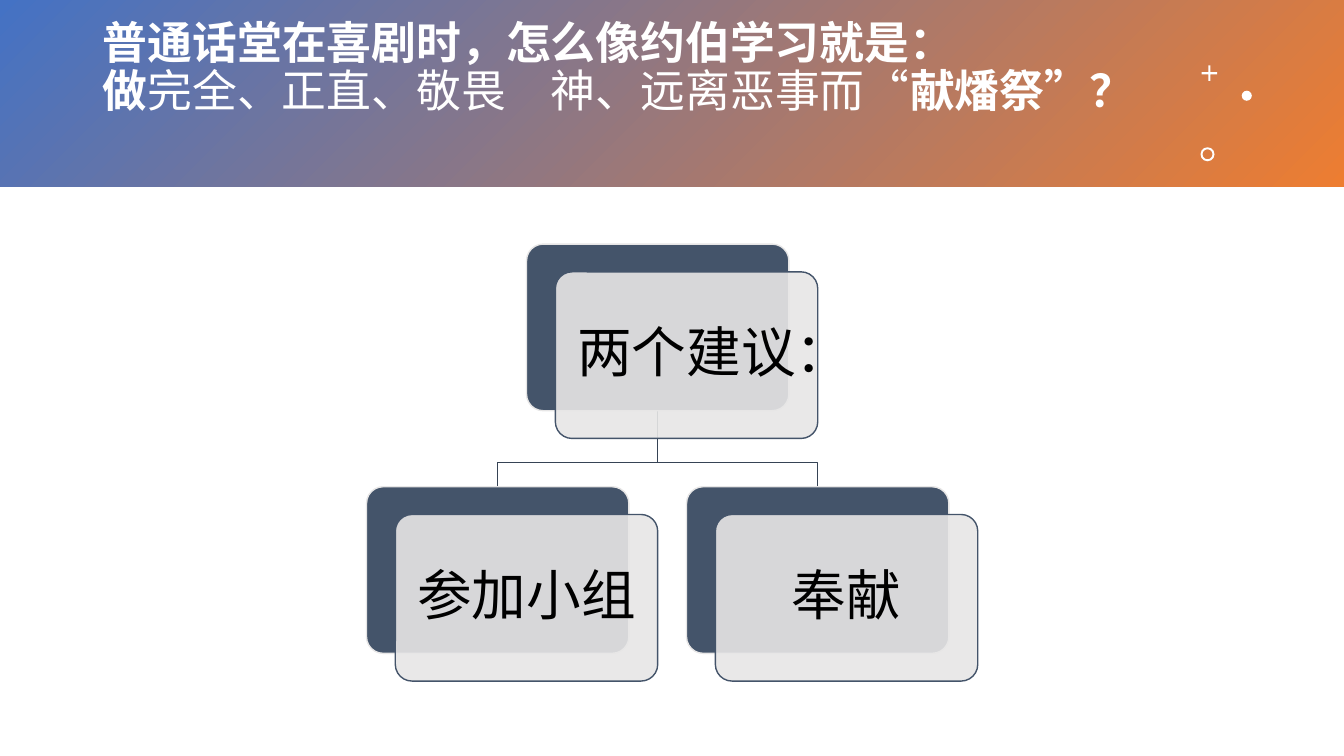
import pptx
import pptx.dml.color
import pptx.enum.lang
import pptx.enum.shapes
import pptx.enum.text
import pptx.oxml
import pptx.oxml.ns
import pptx.util

Pt = pptx.util.Pt
RGBColor = pptx.dml.color.RGBColor
PRESET = pptx.enum.shapes.MSO_SHAPE
ALIGN = pptx.enum.text.PP_ALIGN
MIDDLE = pptx.enum.text.MSO_ANCHOR.MIDDLE

WHITE = RGBColor(0xFF, 0xFF, 0xFF)
BLACK = RGBColor(0x00, 0x00, 0x00)
BLUE = RGBColor(0x44, 0x72, 0xC4)
ORANGE = RGBColor(0xED, 0x7D, 0x31)
SLATE = RGBColor(0x44, 0x54, 0x6A)
DARK_SLATE = RGBColor(0x36, 0x43, 0x55)
PALE = RGBColor(0xE7, 0xE6, 0xE6)

CARD_WIDTH, CARD_HEIGHT = 187.4, 119
VEIL_DX, VEIL_DY = 20.6, 19.8
COLUMN_STEP, ROW_STEP = 228.6, 173.3
BRANCH_DROP = 37


def write_text(paragraph, text, size=32, color=WHITE, bold=False, align=ALIGN.LEFT):
    paragraph.alignment = align
    paragraph.line_spacing = 0.9
    run = paragraph.add_run()
    run.text = text
    run.font.name = "Calibri"
    run.font.size = Pt(size)
    run.font.bold = bold
    run.font.color.rgb = color
    run.font.language_id = pptx.enum.lang.MSO_LANGUAGE_ID.SIMPLIFIED_CHINESE


def set_margins(frame, left, top, right, bottom):
    frame.margin_left, frame.margin_top = Pt(left), Pt(top)
    frame.margin_right, frame.margin_bottom = Pt(right), Pt(bottom)


def add_filled(slide, preset, left, top, width, height, fill, outline=None, adjust=None):
    part = slide.shapes.add_shape(preset, Pt(left), Pt(top), Pt(width), Pt(height))
    part.shadow.inherit = False
    part.fill.solid()
    part.fill.fore_color.rgb = fill
    if outline is None:
        part.line.fill.background()
    else:
        part.line.color.rgb = outline
        part.line.width = Pt(1)
    if adjust is not None:
        part.adjustments[0] = adjust
    return part


def add_header(slide, left, top, width, height):
    band = add_filled(slide, PRESET.RECTANGLE, left, top, width, height, BLUE)
    band.fill.gradient()
    band.fill.gradient_angle = 315
    for stop, color, position in zip(band.fill.gradient_stops, (BLUE, ORANGE), (0, 1)):
        stop.color.rgb = color
        stop.position = position
    slide.shapes._spTree.insert(2, band._element)

    title = slide.shapes.title
    title.left, title.top = Pt(left + 66.2), Pt(top + 23.8)
    title.width, title.height = Pt(774), Pt(85.7)
    frame = title.text_frame
    frame.word_wrap = True
    frame.auto_size = pptx.enum.text.MSO_AUTO_SIZE.NONE
    frame.vertical_anchor = MIDDLE
    set_margins(frame, 7.2, 3.6, 7.2, 38)
    heading = frame.paragraphs[0]
    write_text(heading, "普通话堂在喜剧时，怎么像约伯学习就是：", bold=True)
    heading.add_line_break()
    write_text(heading, "做", bold=True)
    write_text(heading, "完全、正直、敬畏　神、远离恶事而“")
    write_text(heading, "献燔祭”？", bold=True)

    add_filled(slide, PRESET.CROSS, left + 858.4, top + 46.8, 11, 11, WHITE, adjust=0.43)
    add_filled(slide, PRESET.OVAL, left + 887, top + 64.8, 7.2, 7.2, WHITE)
    add_filled(slide, PRESET.DONUT, left + 857.5, top + 105.2, 10, 10, WHITE, adjust=0.14)


def add_card(slide, left, top, label):
    add_filled(slide, PRESET.ROUNDED_RECTANGLE, left, top, CARD_WIDTH, CARD_HEIGHT,
               SLATE, PALE, 0.1)
    veil = add_filled(slide, PRESET.ROUNDED_RECTANGLE, left + VEIL_DX, top + VEIL_DY,
                      CARD_WIDTH, CARD_HEIGHT, PALE, SLATE, 0.1)
    tint = veil._element.spPr.find(".//" + pptx.oxml.ns.qn("a:srgbClr"))
    tint.append(pptx.oxml.parse_xml(
        f'<a:alpha {pptx.oxml.ns.nsdecls("a")} val="90000"/>'))
    frame = veil.text_frame
    frame.word_wrap = True
    frame.vertical_anchor = MIDDLE
    set_margins(frame, 11, 11, 11, 11)
    write_text(frame.paragraphs[0], label, size=39, color=BLACK, align=ALIGN.CENTER)


def add_branch(slide, start_x, start_y, end_x, end_y):
    bend_y = start_y + BRANCH_DROP
    builder = slide.shapes.build_freeform(Pt(start_x), Pt(start_y))
    corners = [(start_x, bend_y), (end_x, bend_y), (end_x, end_y)]
    builder.add_line_segments([(Pt(x), Pt(y)) for x, y in corners], close=False)
    branch = builder.convert_to_shape()
    branch.shadow.inherit = False
    branch.fill.background()
    branch.line.color.rgb = DARK_SLATE
    branch.line.width = Pt(1)


def add_hierarchy(slide, left, top, root, children):
    root_left = left + COLUMN_STEP * (len(children) - 1) / 2
    child_top = top + ROW_STEP
    child_lefts = [left + COLUMN_STEP * i for i in range(len(children))]
    for child_left in child_lefts:
        add_branch(slide, root_left + CARD_WIDTH / 2, top + CARD_HEIGHT,
                   child_left + CARD_WIDTH / 2, child_top)
    add_card(slide, root_left, top, root)
    for child_left, child in zip(child_lefts, children):
        add_card(slide, child_left, child_top, child)


def main():
    deck = pptx.Presentation()
    deck.slide_width, deck.slide_height = Pt(960), Pt(540)
    slide = deck.slides.add_slide(deck.slide_layouts[5])
    add_header(slide, 0, 0, 960, 133.2)
    add_hierarchy(slide, 261.8, 174.4, "两个建议：", ["参加小组", "奉献"])
    deck.save("out.pptx")


if __name__ == "__main__":
    main()
